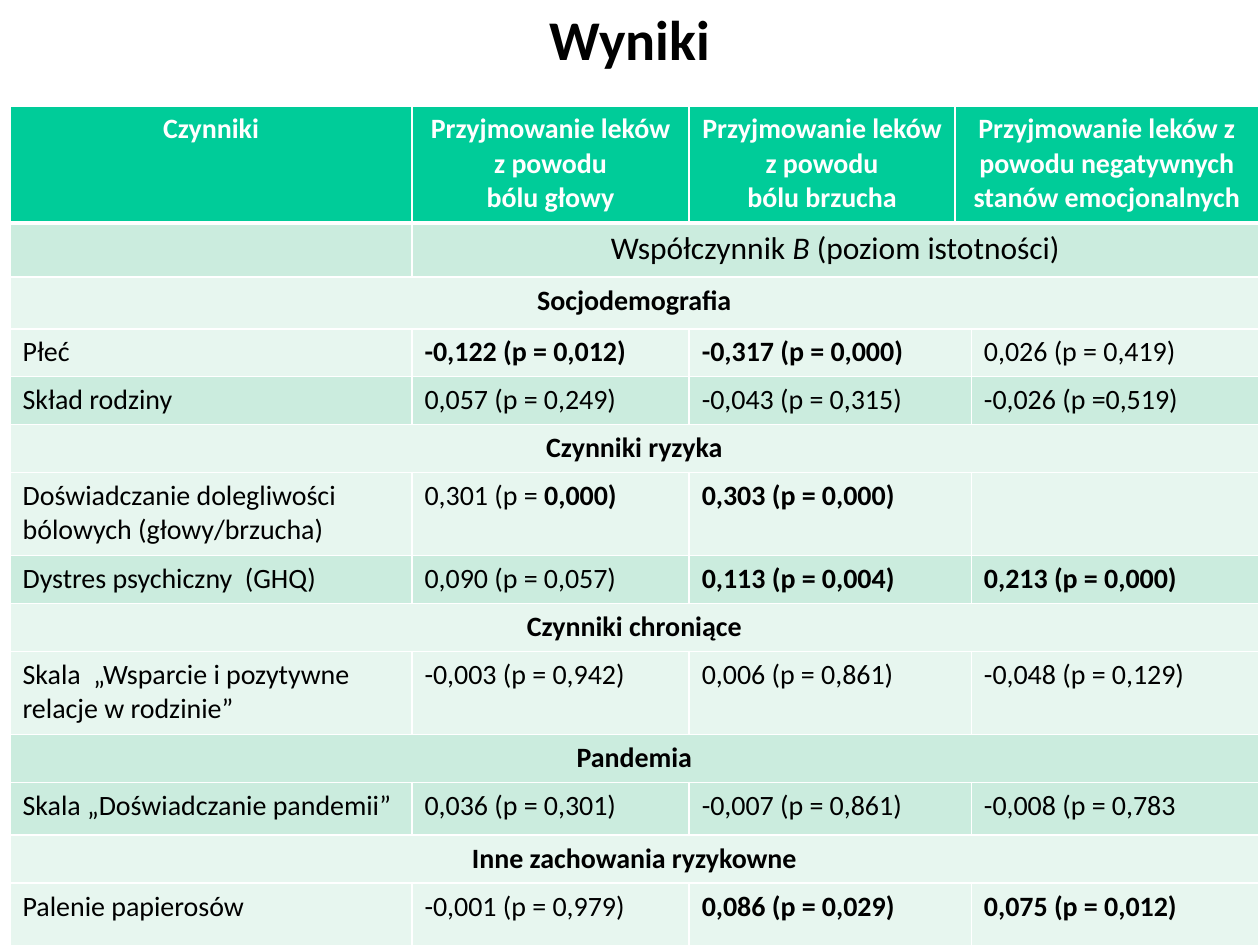
from lxml.etree import SubElement
from pptx import Presentation
from pptx.dml.color import RGBColor
from pptx.enum.text import MSO_ANCHOR, PP_ALIGN
from pptx.oxml.ns import qn
from pptx.util import Inches, Pt

COLORS = {"header": "00CC99", "dark": "CBECDE", "light": "E7F6EF",
          "white": "FFFFFF", "black": "000000"}
FONT = "Calibri"
COLUMN_WIDTHS = [3.19, 2.2, 2.11, 0.13, 2.28]
ROW_HEIGHTS = [0.93, 0.43, 0.41, 0.38, 0.38, 0.38, 0.66,
               0.38, 0.38, 0.66, 0.38, 0.42, 0.38, 0.71]
DARK_ROWS = {1, 4, 7, 10, 11}

# One text makes a section row; asterisks enclose bold words.
ROWS = [
    ["*Czynniki*", "*Przyjmowanie leków z powodu*\n*bólu głowy*",
     "*Przyjmowanie leków z powodu*\n*bólu brzucha*",
     "*Przyjmowanie leków z powodu negatywnych stanów emocjonalnych*"],
    ["", "Współczynnik B (poziom istotności)"],
    ["*Socjodemografia*"],
    ["Płeć", "*-0,122 (p = 0,012)*", "*-0,317 (p = 0,000)*", "0,026 (p = 0,419)"],
    ["Skład rodziny", "0,057 (p = 0,249)", "-0,043 (p = 0,315)", "-0,026 (p =0,519)"],
    ["*Czynniki ryzyka*"],
    ["Doświadczanie dolegliwości bólowych (głowy/brzucha)",
     "0,301 (p = *0,000)*", "*0,303 (p = 0,000)*", ""],
    ["Dystres psychiczny  (GHQ)", "0,090 (p = 0,057)",
     "*0,113 (p = 0,004)*", "*0,213 (p = 0,000)*"],
    ["*Czynniki chroniące*"],
    ["Skala  „Wsparcie i pozytywne relacje w rodzinie”",
     "-0,003 (p = 0,942)", "0,006 (p = 0,861)", "-0,048 (p = 0,129)"],
    ["*Pandemia*"],
    ["Skala „Doświadczanie pandemii”", "0,036 (p = 0,301)",
     "-0,007 (p = 0,861)", "-0,008 (p = 0,783"],
    ["*Inne zachowania ryzykowne*"],
    ["Palenie papierosów", "-0,001 (p = 0,979)",
     "*0,086 (p = 0,029)*", "*0,075 (p = 0,012)*"],
]


def add_run(paragraph, text, size, color, bold=False, italic=False):
    run = paragraph.add_run()
    run.text = text
    run.font.name = FONT
    run.font.size = Pt(size)
    run.font.bold = bold
    run.font.italic = italic
    run.font.color.rgb = RGBColor.from_string(COLORS[color])


def set_borders(cell, top, bottom):
    """Draw white cell borders; top and bottom are widths in points."""
    properties = cell._tc.get_or_add_tcPr()
    for side, width in (("L", 1), ("R", 1), ("T", top), ("B", bottom)):
        line = SubElement(properties, qn(f"a:ln{side}"), w=str(Pt(width)))
        fill = SubElement(line, qn("a:solidFill"))
        SubElement(fill, qn("a:srgbClr"), val=COLORS["white"])


presentation = Presentation()
presentation.slide_width = Inches(10)
presentation.slide_height = Inches(7.5)
slide = presentation.slides.add_slide(presentation.slide_layouts[5])

title = slide.shapes.title
title.left, title.top = Inches(0.75), Inches(0)
title.width, title.height = Inches(8.5), Inches(0.6)
title.text_frame.vertical_anchor = MSO_ANCHOR.MIDDLE
title_paragraph = title.text_frame.paragraphs[0]
title_paragraph.alignment = PP_ALIGN.CENTER
add_run(title_paragraph, "Wyniki", 32, "black", bold=True)

table = slide.shapes.add_table(
    len(ROWS), len(COLUMN_WIDTHS), Inches(0.08), Inches(0.84),
    Inches(sum(COLUMN_WIDTHS)), Inches(sum(ROW_HEIGHTS))).table
for column, width in zip(table.columns, COLUMN_WIDTHS):
    column.width = Inches(width)

for row_index, texts in enumerate(ROWS):
    table.rows[row_index].height = Inches(ROW_HEIGHTS[row_index])
    is_header = row_index == 0
    if is_header:
        row_fill = "header"
    else:
        row_fill = "dark" if row_index in DARK_ROWS else "light"
    for column_index in range(len(COLUMN_WIDTHS)):
        cell = table.cell(row_index, column_index)
        set_borders(cell, 3 if row_index == 1 else 1, 3 if is_header else 1)
        cell.fill.solid()
        cell.fill.fore_color.rgb = RGBColor.from_string(COLORS[row_fill])

    # The narrow fourth column joins its right neighbour in the header, its left one below.
    if len(texts) == 1:
        spans = [(0, 4)]
    elif len(texts) == 2:
        spans = [(0, 0), (1, 4)]
    elif is_header:
        spans = [(0, 0), (1, 1), (2, 2), (3, 4)]
    else:
        spans = [(0, 0), (1, 1), (2, 3), (4, 4)]

    for (first, last), text in zip(spans, texts):
        cell = table.cell(row_index, first)
        if last > first:
            cell.merge(table.cell(row_index, last))
        if not text:
            continue
        cell.text_frame.text = "\n" * text.count("\n")
        for paragraph, line in zip(cell.text_frame.paragraphs, text.split("\n")):
            if is_header or len(texts) < 3:
                paragraph.alignment = PP_ALIGN.CENTER
            if row_index == 1:
                before, after = line.split("B")
                add_run(paragraph, before, 18, "black")
                add_run(paragraph, "B", 18, "black", italic=True)
                add_run(paragraph, after, 18, "black")
                continue
            for part_index, part in enumerate(line.split("*")):
                if part:
                    add_run(paragraph, part, 16, "white" if is_header else "black",
                            bold=part_index % 2 == 1)

presentation.save("out.pptx")
